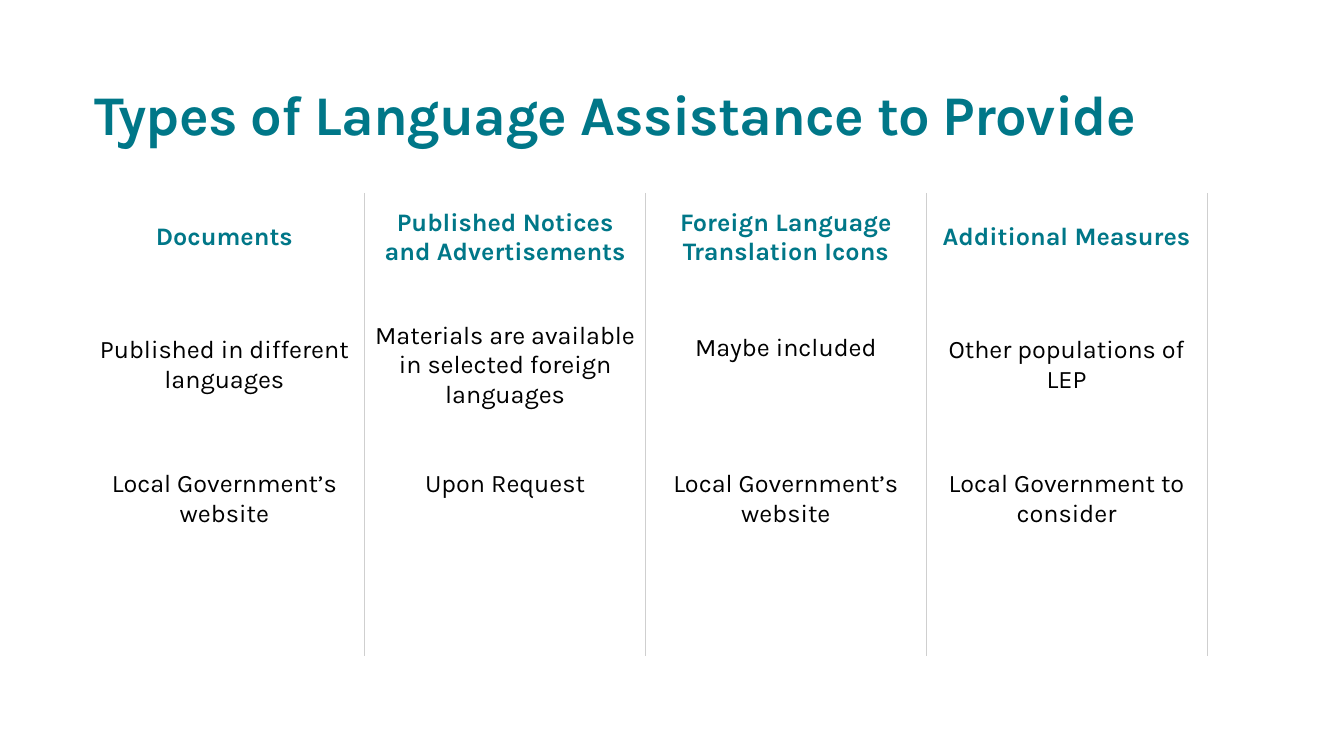
from lxml.etree import SubElement
from pptx import Presentation
from pptx.dml.color import RGBColor
from pptx.enum.text import MSO_ANCHOR, MSO_AUTO_SIZE, PP_ALIGN
from pptx.oxml.ns import qn
from pptx.util import Emu, Pt

EMU_PER_PX = 914400 / 100.8
TEAL = "007788"
BLACK = "000000"
RULE_GREY = "CFCFCF"
TITLE_FORMAT = {"name": "Karla", "size": Pt(40), "bold": True}
HEADING_FORMAT = {"name": "Karla", "size": Pt(18), "bold": True}
BODY_FORMAT = {"name": "Karla", "size": Pt(18), "bold": False}
ROW_HEIGHTS = [89, 132, 241]
ROWS = [
    ["Documents", "Published Notices and Advertisements",
     "Foreign Language Translation Icons", "Additional Measures"],
    ["Published in different languages",
     "Materials are available in selected foreign languages",
     "Maybe included", "Other populations of LEP"],
    ["Local Government’s website", "Upon Request",
     "Local Government’s website", "Local Government to consider"],
]
HEADING_CELL = {"vertical_anchor": MSO_ANCHOR.MIDDLE}
MIDDLE_CELL = {"vertical_anchor": MSO_ANCHOR.MIDDLE}
LOWERED_CELL = {"vertical_anchor": MSO_ANCHOR.MIDDLE, "margin_top": 38, "margin_bottom": 4}
TOP_CELL = {"vertical_anchor": MSO_ANCHOR.TOP, "margin_top": 55}
CELL_FORMATS = [
    [HEADING_CELL] * 4,
    [LOWERED_CELL, LOWERED_CELL, MIDDLE_CELL, LOWERED_CELL],
    [TOP_CELL] * 4,
]


def px(length):
    """Turn a length in pixels into EMU."""
    return Emu(round(length * EMU_PER_PX))


def color(code):
    """Turn a hex string into a colour."""
    return RGBColor.from_string(code)


def set_values(target, values):
    """Set each named attribute of the target."""
    for name, value in values.items():
        setattr(target, name, value)


def add_span(para, text, values, code):
    """Add formatted text to a paragraph."""
    span = para.add_run()
    span.text = text
    set_values(span.font, values)
    span.font.color.rgb = color(code)
    return span


def fill_title(page, text):
    """Place and format the slide title."""
    title = page.shapes.title
    set_values(title, {"left": px(84), "top": px(79), "width": px(1176), "height": px(68)})
    frame = title.text_frame
    set_values(frame, {
        "vertical_anchor": MSO_ANCHOR.BOTTOM, "word_wrap": True,
        "auto_size": MSO_AUTO_SIZE.SHAPE_TO_FIT_TEXT,
        "margin_left": px(10), "margin_right": px(10), "margin_top": 0, "margin_bottom": 0,
    })
    para = frame.paragraphs[0]
    para.alignment = PP_ALIGN.LEFT
    span = add_span(para, text, TITLE_FORMAT, TEAL)
    span.font._element.set("spc", "-50")


def set_borders(cell, ruled_sides):
    """Draw thin rules on the given sides and clear the others."""
    properties = cell._tc.get_or_add_tcPr()
    for side in "LRTB":
        line = SubElement(properties, qn(f"a:ln{side}"), w=str(Pt(0.5)))
        if side in ruled_sides:
            fill = SubElement(line, qn("a:solidFill"))
            SubElement(fill, qn("a:srgbClr"), val=RULE_GREY)
        else:
            SubElement(line, qn("a:noFill"))


def fill_cell(cell, text, cell_format, font_format, code):
    """Write one centred table cell."""
    for name, value in cell_format.items():
        setattr(cell, name, px(value) if name.startswith("margin") else value)
    para = cell.text_frame.paragraphs[0]
    para.alignment = PP_ALIGN.CENTER
    add_span(para, text, font_format, code)


def add_assistance_table(page):
    """Add the table of language assistance types."""
    count = len(ROWS[0])
    frame = page.shapes.add_table(len(ROWS), count, px(84), px(193),
                                  px(1123), px(sum(ROW_HEIGHTS)))
    table = frame.table
    set_values(table, {"first_row": False, "horz_banding": False})
    for column in table.columns:
        column.width = px(1123) // count
    for row_index, texts in enumerate(ROWS):
        table.rows[row_index].height = px(ROW_HEIGHTS[row_index])
        font_format, code = (BODY_FORMAT, BLACK) if row_index else (HEADING_FORMAT, TEAL)
        for column_index, text in enumerate(texts):
            cell = table.cell(row_index, column_index)
            set_borders(cell, "LR" if column_index else "R")
            cell.fill.background()
            fill_cell(cell, text, CELL_FORMATS[row_index][column_index], font_format, code)


def main():
    """Build and save the slide."""
    deck = Presentation()
    set_values(deck, {"slide_width": px(1344), "slide_height": px(756)})
    page = deck.slides.add_slide(deck.slide_layouts[5])
    fill_title(page, "Types of Language Assistance to Provide")
    add_assistance_table(page)
    deck.save("out.pptx")


if __name__ == "__main__":
    main()
